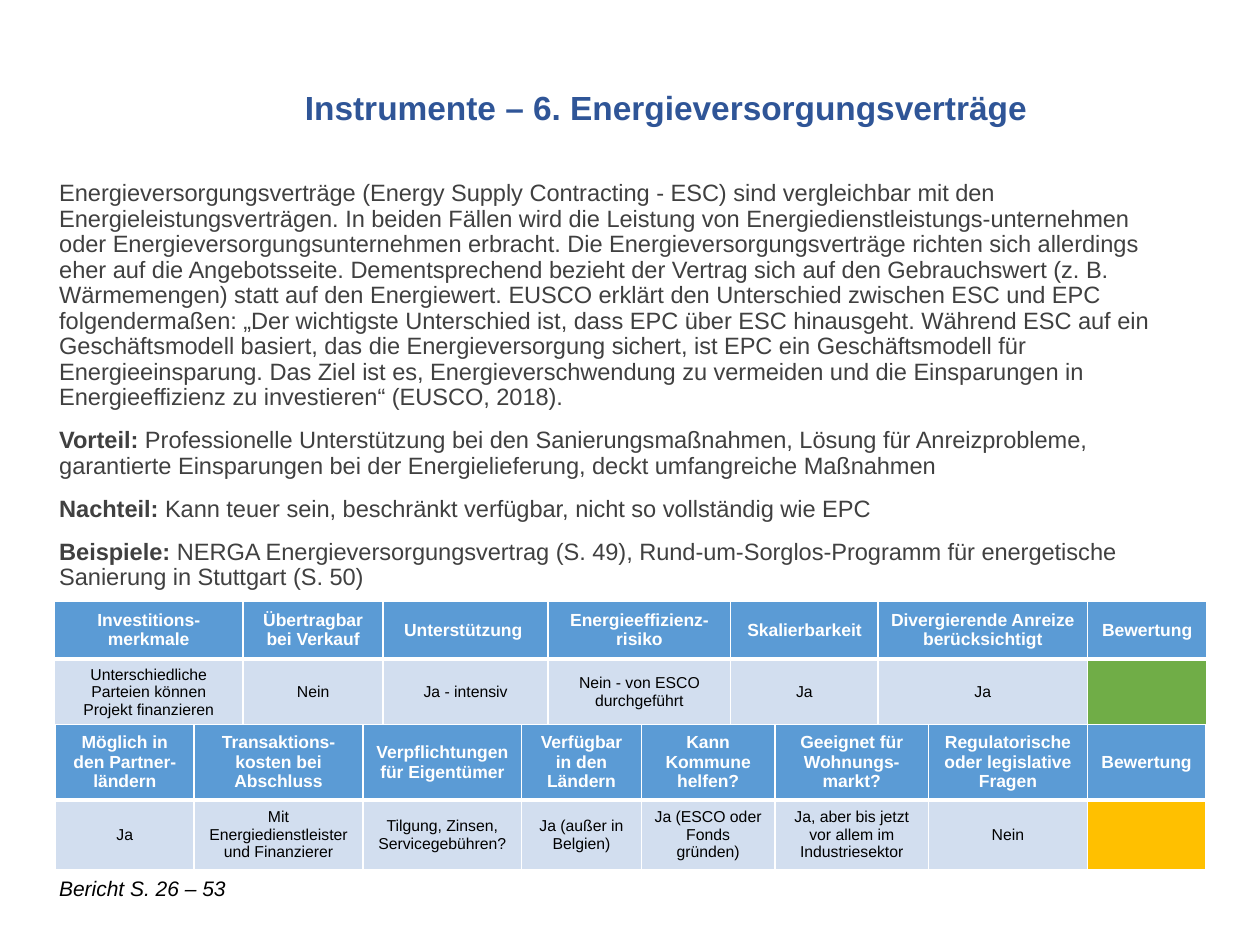
from dataclasses import dataclass
from lxml.etree import SubElement as Sub
from pptx import Presentation
from pptx.dml.color import RGBColor as Rgb
from pptx.enum.text import MSO_ANCHOR as Anc, MSO_AUTO_SIZE as Fit, PP_ALIGN as Al
from pptx.oxml.ns import qn
from pptx.util import Inches as In, Pt


@dataclass(frozen=True)
class Theme:
    """Colours and type sizes of the slide."""
    font: str = "Arial"
    blue: str = "2F5597"
    grey: str = "404040"
    black: str = "000000"
    white: str = "FFFFFF"
    head: str = "5B9BD5"
    cell: str = "D2DEEF"
    good: str = "70AD47"
    fair: str = "FFC000"
    title: float = 19.1
    body: float = 13.5
    note: float = 12
    label: float = 10
    value: float = 9


T = Theme()
TITLE = "Instrumente – 6. Energieversorgungsverträge"
INTRO = [
    "Energieversorgungsverträge (Energy Supply Contracting - ESC) sind vergleichbar mit den "
    "Energieleistungsverträgen.",
    "In beiden Fällen wird die Leistung von Energiedienstleistungs-unternehmen oder "
    "Energieversorgungsunternehmen erbracht.",
    "Die Energieversorgungsverträge richten sich allerdings eher auf die Angebotsseite.",
    "Dementsprechend bezieht der Vertrag sich auf den Gebrauchswert (z. B. Wärmemengen) statt "
    "auf den Energiewert.",
    "EUSCO erklärt den Unterschied zwischen ESC und EPC folgendermaßen: „Der wichtigste "
    "Unterschied ist, dass EPC über ESC hinausgeht.",
    "Während ESC auf ein Geschäftsmodell basiert, das die Energieversorgung sichert, ist EPC "
    "ein Geschäftsmodell für Energieeinsparung.",
    "Das Ziel ist es, Energieverschwendung zu vermeiden und die Einsparungen in "
    "Energieeffizienz zu investieren“ (EUSCO, 2018).",
]
BODY = [
    ("", " ".join(INTRO)),
    ("Vorteil:", " Professionelle Unterstützung bei den Sanierungsmaßnahmen, Lösung für "
     "Anreizprobleme, garantierte Einsparungen bei der Energielieferung, deckt umfangreiche "
     "Maßnahmen"),
    ("Nachteil:", " Kann teuer sein, beschränkt verfügbar, nicht so vollständig wie EPC"),
    ("Beispiele: ", "NERGA Energieversorgungsvertrag (S. 49), Rund-um-Sorglos-Programm für "
     "energetische Sanierung in Stuttgart (S. 50)"),
]
NOTE = "Bericht S. 26 – 53"
GRIDS = [
    dict(at=(0.43, 4.77), rows=(0.46, 0.53), mark=T.good, cols=[
        (1.5, "Investitions-merkmale", "Unterschiedliche Parteien können Projekt finanzieren"),
        (1.11, "Übertragbar bei Verkauf", "Nein"),
        (1.31, "Unterstützung ", "Ja - intensiv"),
        (1.45, "Energieeffizienz-risiko", "Nein - von ESCO durchgeführt"),
        (1.17, "Skalierbarkeit", "Ja"),
        (1.66, "Divergierende Anreize berücksichtigt", "Ja"),
        (0.95, "Bewertung", "")]),
    dict(at=(0.44, 5.75), rows=(0.6, 0.55), mark=T.fair, cols=[
        (1.1, "Möglich in den Partner-ländern", "Ja"),
        (1.34, "Transaktions-kosten bei Abschluss", "Mit Energiedienstleister und Finanzierer"),
        (1.26, "Verpflichtungen für Eigentümer", "Tilgung, Zinsen, Servicegebühren?"),
        (0.95, "Verfügbar in den Ländern", "Ja (außer in Belgien)"),
        (1.06, "Kann Kommune helfen?", "Ja (ESCO oder Fonds gründen)"),
        (1.22, "Geeignet für Wohnungs-markt?", "Ja, aber bis jetzt vor allem im Industriesektor"),
        (1.26, "Regulatorische oder legislative Fragen", "Nein"),
        (0.94, "Bewertung", "")]),
]


def write(par, text, size, color, bold=False, italic=False, align=Al.LEFT, line=None):
    par.alignment = align
    if line:
        par.line_spacing = line
    run = par.add_run()
    run.text = text
    font = run.font
    font.name, font.size, font.bold, font.italic = T.font, Pt(size), bold, italic
    font.color.rgb = Rgb.from_string(color)


def place(shape, x, y, w, h, anchor=Anc.TOP):
    shape.left, shape.top, shape.width, shape.height = map(In, (x, y, w, h))
    frame = shape.text_frame
    frame.word_wrap, frame.auto_size, frame.vertical_anchor = True, Fit.NONE, anchor
    return frame


def edge(cell, low):
    props = cell._tc.get_or_add_tcPr()
    for side, width in (("L", 1), ("R", 1), ("T", 1), ("B", low)):
        line = Sub(props, qn(f"a:ln{side}"), w=str(Pt(width)))
        Sub(Sub(line, qn("a:solidFill")), qn("a:srgbClr"), val=T.white)


def grid(slide, at, rows, mark, cols):
    wides, heads, values = zip(*cols)
    table = slide.shapes.add_table(2, len(cols), *map(In, (*at, sum(wides), sum(rows)))).table
    for col, wide in zip(table.columns, wides):
        col.width = In(wide)
    looks = [(heads, T.head, 3, dict(size=T.label, color=T.white, bold=True)),
             (values, T.cell, 1, dict(size=T.value, color=T.black))]
    for r, (texts, fill, low, form) in enumerate(looks):
        table.rows[r].height = In(rows[r])
        for c, text in enumerate(texts):
            cell = table.cell(r, c)
            edge(cell, low)
            cell.fill.solid()
            cell.fill.fore_color.rgb = Rgb.from_string(fill if text else mark)
            cell.vertical_anchor = Anc.MIDDLE
            if text:
                write(cell.text_frame.paragraphs[0], text, align=Al.CENTER, **form)


def main():
    deck = Presentation()
    deck.slide_width, deck.slide_height = In(10), In(7.5)
    slide = deck.slides.add_slide(deck.slide_layouts[1])
    title, body = slide.placeholders

    frame = place(body, 0.37, 1.39, 9.04, 4.61)
    for i, (lead, text) in enumerate(BODY):
        par = frame.add_paragraph() if i else frame.paragraphs[0]
        props = par._p.get_or_add_pPr()
        props.set("marL", "0")
        props.set("indent", "0")
        Sub(props, qn("a:buNone"))
        par.space_before = Pt(10 if i else 0)
        if lead:
            write(par, lead, T.body, T.grey, bold=True, line=0.9)
        write(par, text, T.body, T.grey, line=0.9)

    frame = place(title, 2.32, 0.6, 6.28, 0.56, Anc.MIDDLE)
    write(frame.paragraphs[0], TITLE, T.title, T.blue, bold=True, line=0.8)
    note = slide.shapes.add_textbox(0, 0, 0, 0)
    frame = place(note, 0.37, 6.9, 2.32, 0.3)
    write(frame.paragraphs[0], NOTE, T.note, T.black, italic=True)
    for spot in GRIDS:
        grid(slide, **spot)
    deck.save("out.pptx")


if __name__ == "__main__":
    main()
